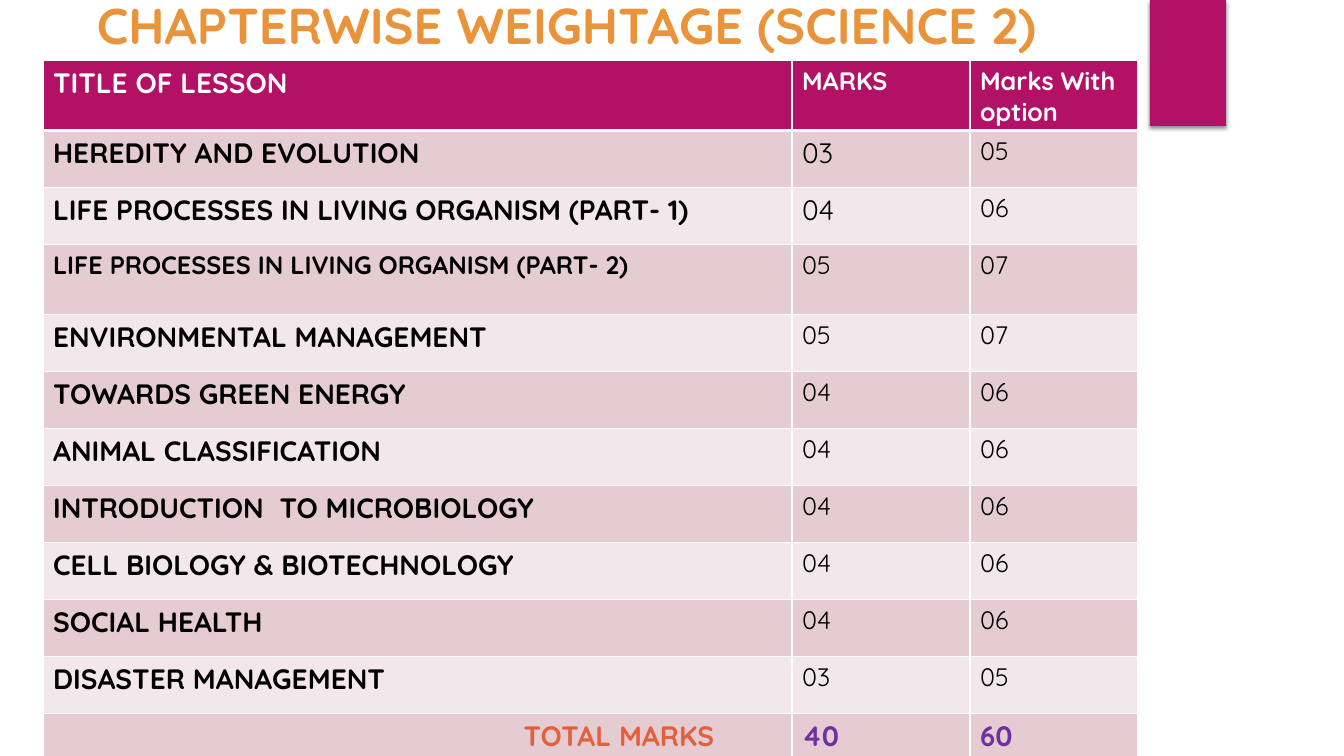
from dataclasses import dataclass

from lxml import etree
from pptx import Presentation
from pptx import util as u
from pptx.dml.color import RGBColor
from pptx.enum import shapes, text
from pptx.oxml import parse_xml
from pptx.oxml.ns import nsdecls, qn

SCALE = 914400 / 100.8  # EMU per px


@dataclass(frozen=True)
class Theme:
    font: str = "Quicksand"
    accent: str = "B31166"
    white: str = "FFFFFF"
    black: str = "000000"
    title: str = "E9943A"
    total_label: str = "E45F3C"
    total_value: str = "7030A0"
    bands: tuple = ("E5CCD3", "F2E7EA")
    title_size: int = 36
    large: int = 20
    small: int = 18


THEME = Theme()

# lesson, marks, marks with option, lesson size, marks size
LESSONS = [
    ("HEREDITY AND EVOLUTION", "03", "05", THEME.large, THEME.large),
    ("LIFE PROCESSES IN LIVING ORGANISM (PART- 1)", "04", "06", THEME.large, THEME.large),
    ("LIFE PROCESSES IN LIVING ORGANISM (PART- 2)", "05", "07", THEME.small, THEME.small),
    ("ENVIRONMENTAL MANAGEMENT", "05", "07", THEME.large, THEME.small),
    ("TOWARDS GREEN ENERGY", "04", "06", THEME.large, THEME.small),
    ("ANIMAL CLASSIFICATION", "04", "06", THEME.large, THEME.small),
    ("INTRODUCTION  TO MICROBIOLOGY", "04", "06", THEME.large, THEME.small),
    ("CELL BIOLOGY & BIOTECHNOLOGY", "04", "06", THEME.large, THEME.small),
    ("SOCIAL HEALTH", "04", "06", THEME.large, THEME.small),
    ("DISASTER MANAGEMENT", "03", "05", THEME.large, THEME.small),
]
COLUMN_WIDTHS = (749, 178, 168)
ROW_HEIGHT = 57
TALL_ROW_HEIGHT = 70
TALL_ROWS = (0, 3)
TOTAL_RIGHT_MARGIN = 78


def px(length):
    return u.Emu(round(length * SCALE))


def color(value):
    return RGBColor.from_string(value)


def write(frame, content, size, font_color, bold=False):
    run = frame.paragraphs[0].add_run()
    run.text = content
    formats = {"name": THEME.font, "size": u.Pt(size), "bold": bold}
    for name, value in formats.items():
        setattr(run.font, name, value)
    run.font.color.rgb = color(font_color)


def add_accent_bar(slide, box):
    bar = slide.shapes.add_shape(shapes.MSO_SHAPE.RECTANGLE, *map(px, box))
    bar.fill.solid()
    bar.fill.fore_color.rgb = color(THEME.accent)
    bar.line.fill.background()
    bar.shadow.inherit = False
    effects = bar._element.spPr.find(qn("a:effectLst"))
    effects.append(parse_xml(
        f'<a:outerShdw {nsdecls("a")} blurRad="{u.Pt(3)}" dist="{u.Pt(2)}" dir="5400000" '
        f'rotWithShape="0"><a:srgbClr val="{THEME.black}"><a:alpha val="45000"/>'
        '</a:srgbClr></a:outerShdw>'))


def add_title(slide, box):
    frame = slide.shapes.add_textbox(*map(px, box)).text_frame
    frame.word_wrap = True
    frame.auto_size = text.MSO_AUTO_SIZE.SHAPE_TO_FIT_TEXT
    write(frame, "CHAPTERWISE WEIGHTAGE (SCIENCE 2)", THEME.title_size, THEME.title, True)


def set_borders(cell, bottom_width):
    """Draw white borders, placed ahead of the cell's fill as the schema requires."""
    properties = cell._tc.get_or_add_tcPr()
    widths = {"lnL": 1, "lnR": 1, "lnT": 1, "lnB": bottom_width}
    for position, (side, width) in enumerate(widths.items()):
        line = etree.Element(qn(f"a:{side}"), w=str(u.Pt(width)))
        fill = etree.SubElement(line, qn("a:solidFill"))
        etree.SubElement(fill, qn("a:srgbClr"), val=THEME.white)
        properties.insert(position, line)


def fill_row(row, fill, entries, bottom_width=1):
    """Fill a table row; each entry is (content, size, color, bold)."""
    for cell, entry in zip(row.cells, entries):
        cell.fill.solid()
        cell.fill.fore_color.rgb = color(fill)
        set_borders(cell, bottom_width)
        write(cell.text_frame, *entry)


def add_weightage_table(slide, left, top):
    row_count = len(LESSONS) + 2
    heights = [TALL_ROW_HEIGHT if index in TALL_ROWS else ROW_HEIGHT
               for index in range(row_count)]
    size = (sum(COLUMN_WIDTHS), sum(heights))
    table = slide.shapes.add_table(
        row_count, len(COLUMN_WIDTHS), px(left), px(top), *map(px, size)).table
    for column, width in zip(table.columns, COLUMN_WIDTHS):
        column.width = px(width)
    for row, height in zip(table.rows, heights):
        row.height = px(height)

    header, *lesson_rows, total = table.rows
    fill_row(header, THEME.accent, [
        ("TITLE OF LESSON", THEME.large, THEME.white, True),
        ("MARKS", THEME.small, THEME.white, True),
        ("Marks With option", THEME.small, THEME.white, True),
    ], bottom_width=3)
    for index, (row, record) in enumerate(zip(lesson_rows, LESSONS)):
        lesson, marks, with_option, lesson_size, marks_size = record
        fill_row(row, THEME.bands[index % 2], [
            (lesson, lesson_size, THEME.black, True),
            (marks, marks_size, THEME.black),
            (with_option, THEME.small, THEME.black),
        ])
    fill_row(total, THEME.bands[len(LESSONS) % 2], [
        ("TOTAL MARKS", THEME.large, THEME.total_label, True),
        ("40", THEME.large, THEME.total_value, True),
        ("60", THEME.large, THEME.total_value, True),
    ])
    label = total.cells[0]
    label.margin_right = px(TOTAL_RIGHT_MARGIN)
    label.text_frame.paragraphs[0].alignment = text.PP_ALIGN.RIGHT


def main():
    presentation = Presentation()
    presentation.slide_width, presentation.slide_height = px(1344), px(756)
    slide = presentation.slides.add_slide(presentation.slide_layouts[6])
    add_accent_bar(slide, (1150, 0, 76, 126))
    add_title(slide, (87, -11, 1290, 72))
    add_weightage_table(slide, 43, 60)
    presentation.save("out.pptx")


if __name__ == "__main__":
    main()
